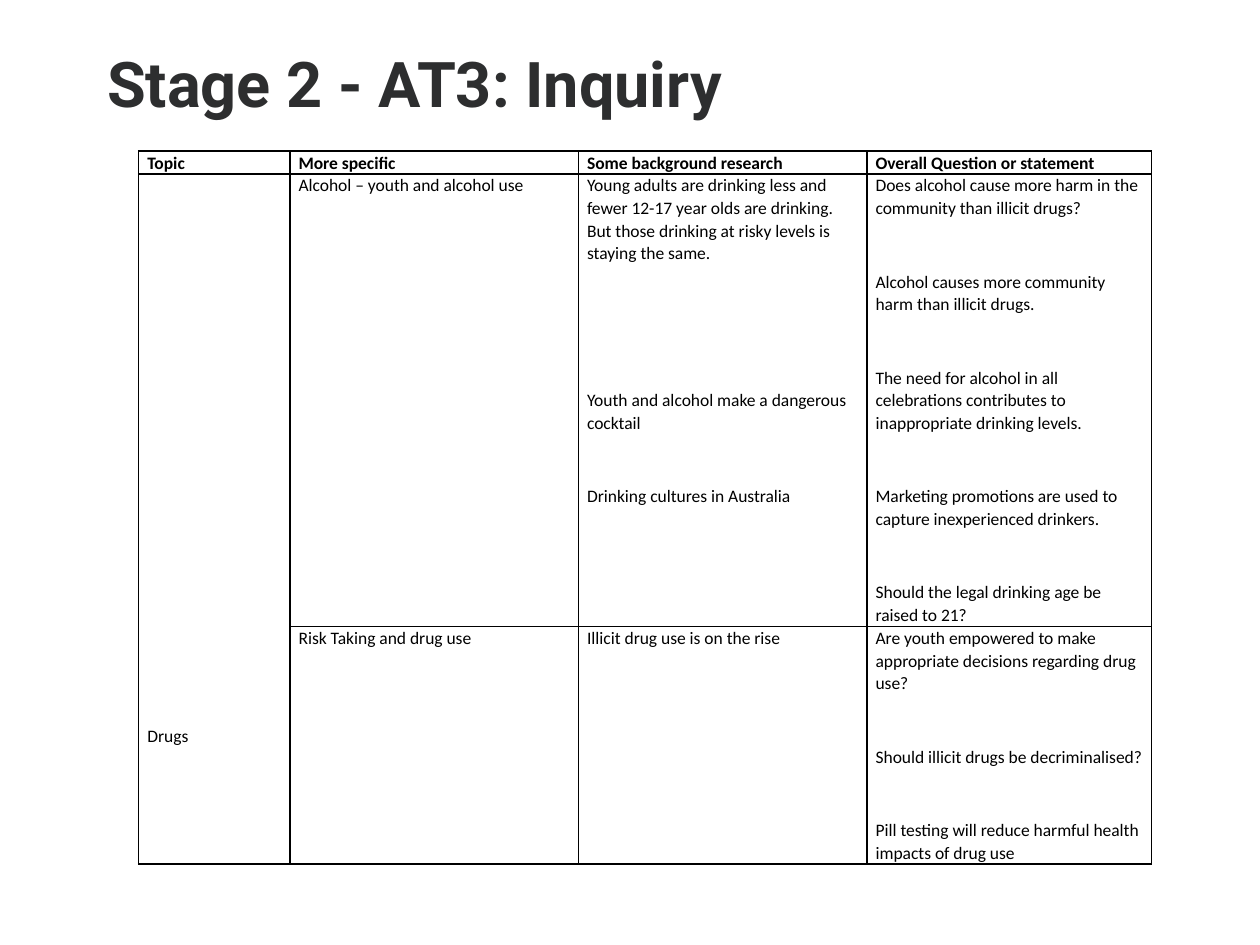
"""Build the Stage 2 inquiry slide with its table of drug topics."""
from dataclasses import dataclass

import pptx
import pptx.dml.color
import pptx.enum.text
import pptx.oxml
import pptx.oxml.ns
import pptx.table
import pptx.util


@dataclass(frozen=True)
class Theme:
    title_font: str = "Roboto"
    body_font: str = "Calibri"
    title_size: float = 36
    body_size: float = 10
    title_color: str = "2D2E2F"
    body_color: str = "000000"
    border_color: str = "000000"
    border_width: float = 1
    title_spacing: float = 0.9
    body_spacing: float = 1.07
    gap: float = 29
    wide_gap: float = 71


@dataclass(frozen=True)
class Area:
    left: float
    top: float
    width: float
    height: float

    def place(self, deck) -> tuple[int, int, int, int]:
        across, down = deck.slide_width, deck.slide_height
        return (int(self.left * across), int(self.top * down),
                int(self.width * across), int(self.height * down))


@dataclass(frozen=True)
class Entry:
    row: int
    column: int
    lines: tuple[str, ...]
    gaps: tuple[float, ...] = ()
    bold: bool = False


THEME = Theme()
TITLE_AREA = Area(0.075, 0.03, 0.875, 0.125)
TABLE_AREA = Area(0.11, 0.16, 0.8, 0.75)
COLUMNS = (1.2, 2.29, 2.29, 2.26)
ROWS = (0.18, 3.59, 1.88)
SIDE_MARGIN = 0.07
TOPIC_BOTTOM_MARGIN = 0.93
HEADINGS = ("Topic", "More specific", "Some background research",
            "Overall Question or statement")
ALCOHOL_RESEARCH = (
    "Young adults are drinking less and fewer 12-17 year olds are drinking. "
    "But those drinking at risky levels is staying the same.",
    "Youth and alcohol make a dangerous cocktail",
    "Drinking cultures in Australia",
)
ALCOHOL_QUESTIONS = (
    "Does alcohol cause more harm in the community than illicit drugs?",
    "Alcohol causes more community harm than illicit drugs.",
    "The need for alcohol in all celebrations contributes to inappropriate drinking levels.",
    "Marketing promotions are used to capture inexperienced drinkers.",
    "Should the legal drinking age be raised to 21?",
)
DRUG_QUESTIONS = (
    "Are youth empowered to make appropriate decisions regarding drug use?",
    "Should illicit drugs be decriminalised?",
    "Pill testing will reduce harmful health impacts of drug use",
)
ENTRIES = (
    *(Entry(0, column, (heading,), bold=True) for column, heading in enumerate(HEADINGS)),
    Entry(1, 0, ("Drugs",)),
    Entry(1, 1, ("Alcohol – youth and alcohol use",)),
    Entry(1, 2, ALCOHOL_RESEARCH, (THEME.wide_gap, THEME.gap)),
    Entry(1, 3, ALCOHOL_QUESTIONS, (THEME.gap,) * 4),
    Entry(2, 1, ("Risk Taking and drug use",)),
    Entry(2, 2, ("Illicit drug use is on the rise",)),
    Entry(2, 3, DRUG_QUESTIONS, (THEME.gap,) * 2),
)


def style(paragraph, name: str, size: float, color: str, bold: bool) -> None:
    font = paragraph.font
    font.name, font.size, font.bold = name, pptx.util.Pt(size), bold
    font.color.rgb = pptx.dml.color.RGBColor.from_string(color)


def add_title(deck, page, text: str) -> None:
    box = page.shapes.title
    box.left, box.top, box.width, box.height = TITLE_AREA.place(deck)
    frame = box.text_frame
    frame.text = text
    frame.auto_size = pptx.enum.text.MSO_AUTO_SIZE.NONE
    frame.vertical_anchor = pptx.enum.text.MSO_ANCHOR.MIDDLE
    para = frame.paragraphs[0]
    para.alignment = pptx.enum.text.PP_ALIGN.LEFT
    para.line_spacing = THEME.title_spacing
    style(para, THEME.title_font, THEME.title_size, THEME.title_color, True)


def format_cell(cell: pptx.table._Cell) -> None:
    cell.margin_left = cell.margin_right = pptx.util.Inches(SIDE_MARGIN)
    cell.margin_top = cell.margin_bottom = 0
    properties = cell._tc.get_or_add_tcPr()
    for side in ("lnL", "lnR", "lnT", "lnB"):
        properties.append(pptx.oxml.parse_xml(
            f'<a:{side} {pptx.oxml.ns.nsdecls("a")} w="{pptx.util.Pt(THEME.border_width)}">'
            f'<a:solidFill><a:srgbClr val="{THEME.border_color}"/></a:solidFill></a:{side}>'))
    cell.fill.background()


def write_entry(table: pptx.table.Table, entry: Entry) -> None:
    frame = table.cell(entry.row, entry.column).text_frame
    frame.text = "\n".join(entry.lines)
    for para in frame.paragraphs:
        para.line_spacing = THEME.body_spacing
        style(para, THEME.body_font, THEME.body_size, THEME.body_color, entry.bold)
    for para, gap in zip(frame.paragraphs, entry.gaps):
        para.space_after = pptx.util.Pt(gap)


def add_topic_table(deck, page) -> None:
    table = page.shapes.add_table(len(ROWS), len(COLUMNS), *TABLE_AREA.place(deck)).table
    table.first_row = table.horz_banding = False
    for column, width in zip(table.columns, COLUMNS):
        column.width = pptx.util.Inches(width)
    for row, height in zip(table.rows, ROWS):
        row.height = pptx.util.Inches(height)
    for cell in table.iter_cells():
        format_cell(cell)
        style(cell.text_frame.paragraphs[0], THEME.body_font, THEME.body_size,
              THEME.body_color, False)
    topic = table.cell(1, 0)
    topic.merge(table.cell(2, 0))
    topic.vertical_anchor = pptx.enum.text.MSO_ANCHOR.BOTTOM
    topic.margin_bottom = pptx.util.Inches(TOPIC_BOTTOM_MARGIN)
    for entry in ENTRIES:
        write_entry(table, entry)


def main() -> None:
    deck = pptx.Presentation()
    deck.slide_width, deck.slide_height = pptx.util.Inches(10), pptx.util.Inches(7.5)
    page = deck.slides.add_slide(deck.slide_layouts.get_by_name("Title Only"))
    add_title(deck, page, "Stage 2 - AT3: Inquiry")
    add_topic_table(deck, page)
    deck.save("out.pptx")


if __name__ == "__main__":
    main()
